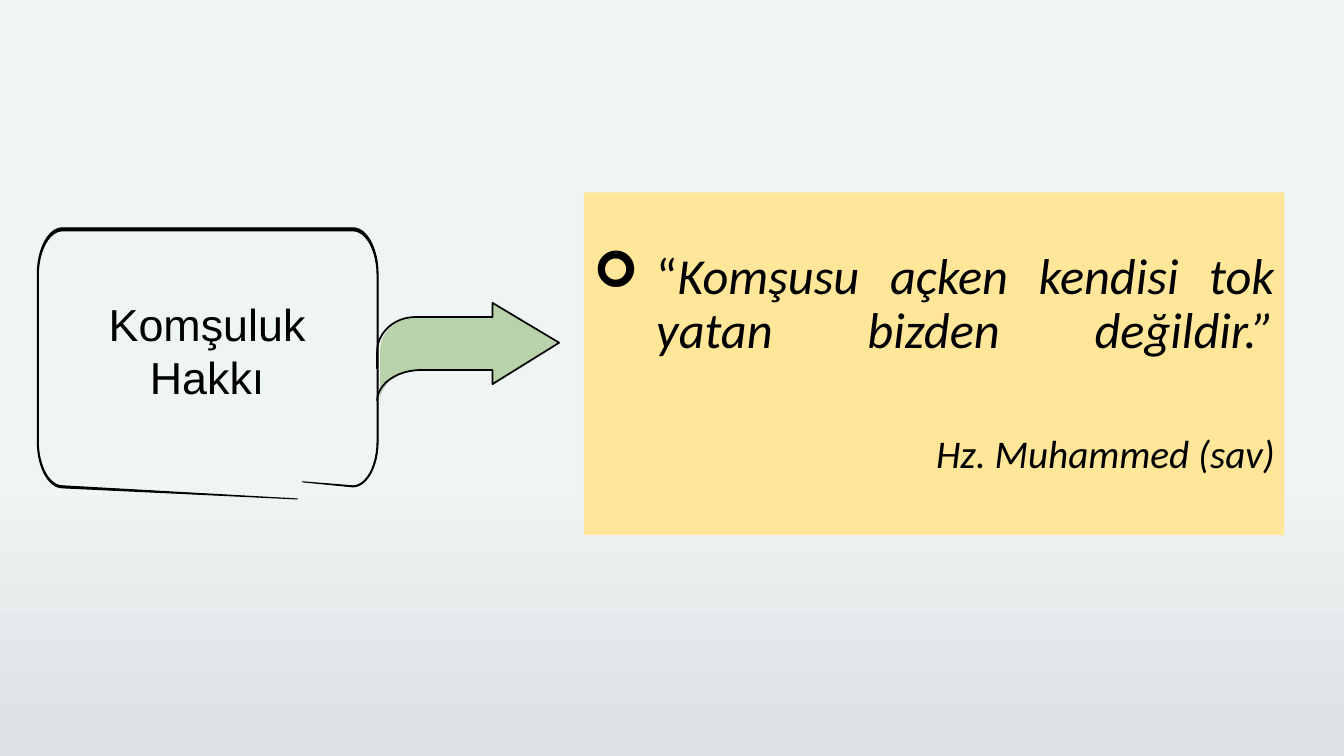
"""Build the neighbour rights slide: framed label, curved arrow and quotation panel."""
from math import cos, radians, sin

from lxml.etree import SubElement
from pptx import Presentation
from pptx.dml.color import RGBColor
from pptx.enum.shapes import MSO_SHAPE as SHAPE
from pptx.enum.text import MSO_ANCHOR as ANCHOR, PP_ALIGN as ALIGN
from pptx.oxml.ns import qn
from pptx.util import Inches, Pt

COLS, ROWS = 1333, 750
CELL = Inches(0.01)
BLACK, GREEN, YELLOW = "000000", "B8D3A9", "FFE699"


def arc(cx, cy, rx, ry, start, end, steps=12):
    angles = [radians(start + (end - start) * i / steps) for i in range(steps + 1)]
    return [(cx + rx * cos(a), cy + ry * sin(a)) for a in angles]


def rgb(value):
    return RGBColor.from_string(value)


prs = Presentation()
prs.slide_width, prs.slide_height = COLS * CELL, ROWS * CELL
s = prs.slides.add_slide(prs.slide_layouts[6])

bg = s.background.fill
bg.gradient()
bg.gradient_angle = 270
for stop, position, color in zip(bg.gradient_stops, (0.62, 1), ("EFF4F5", "DCE1E4")):
    stop.position = position
    stop.color.rgb = rgb(color)

frame = [
    *arc(62, 272, 25, 46, 270, 180),
    *arc(62, 438, 25, 46, 180, 90),
    (295, 495),
    *arc(62, 438, 24, 44, 90, 180),
    *arc(62, 273, 24, 44, 180, 270),
    *arc(350, 273, 24, 44, 270, 360),
    *arc(350, 438, 24, 44, 0, 90),
    (300, 478),
    *arc(350, 438, 25, 45, 90, 0),
    *arc(350, 272, 25, 46, 360, 270),
]
arrow_body = [
    *arc(414, 347, 37, 32, 180, 270),
    (488, 315), (488, 300), (552, 340), (488, 381), (488, 367),
    *arc(417, 398, 40, 31, 270, 180),
]
arrow_edge = [
    (374, 366),
    *arc(412, 349, 38, 34.5, 180, 270),
    (488.5, 314.5), (488.5, 300.5), (554.5, 340), (488.5, 381), (488.5, 367),
    *arc(418, 398, 44, 31, 270, 180),
]
outlines = [
    (frame, True, BLACK, 0.75),
    (arrow_body, True, GREEN, None),
    (arrow_edge, False, None, 1.25),
]
for points, closed, fill, width in outlines:
    (x, y), *rest = [(round(px * CELL), round(py * CELL)) for px, py in points]
    fb = s.shapes.build_freeform(x, y)
    fb.add_line_segments(rest, close=closed)
    sp = fb.convert_to_shape()
    sp.shadow.inherit = False
    if fill:
        sp.fill.solid()
        sp.fill.fore_color.rgb = rgb(fill)
    else:
        sp.fill.background()
    if width:
        sp.line.color.rgb = rgb(BLACK)
        sp.line.width = Pt(width)
    else:
        sp.line.fill.background()

label = s.shapes.add_textbox(46 * CELL, 289 * CELL, 319 * CELL, 118 * CELL)
label.text_frame.word_wrap = True
p = label.text_frame.paragraphs[0]
p.text = "Komşuluk Hakkı"
p.alignment = ALIGN.CENTER
r = p.runs[0]
r.font.name, r.font.size = "Arial", Pt(32)
r.font.color.rgb = rgb(BLACK)

panel = s.shapes.add_shape(SHAPE.RECTANGLE, 579 * CELL, 191 * CELL, 695 * CELL, 340 * CELL)
panel.shadow.inherit = False
panel.fill.solid()
panel.fill.fore_color.rgb = rgb(YELLOW)
panel.line.fill.background()
tf = panel.text_frame
tf.word_wrap = True
tf.vertical_anchor = ANCHOR.MIDDLE

quote = tf.paragraphs[0]
quote.text = "“"
quote.add_run().text = "Komşusu açken kendisi tok yatan bizden değildir.”"
quote.add_line_break()
source = tf.add_paragraph()
source.text = "Hz. Muhammed (sav)"
source.space_before = Pt(10)
for p, align, size in ((quote, ALIGN.JUSTIFY, 36), (source, ALIGN.RIGHT, 28)):
    p.alignment = align
    p.line_spacing = 0.9
    for r in p.runs:
        r.font.name, r.font.size = "Calibri", Pt(size)
        r.font.italic = r.text != "“"
        r.font.color.rgb = rgb(BLACK)

pPr = quote._p.get_or_add_pPr()
pPr.set("marL", str(62 * CELL))
pPr.set("indent", str(-62 * CELL))
SubElement(pPr, qn("a:buFont"), typeface="Wingdings")
SubElement(pPr, qn("a:buChar"), char="➢")
for parent, tag in ((quote._p.find(qn("a:br")), "a:rPr"), (quote._p, "a:endParaRPr")):
    rPr = SubElement(parent, qn(tag), sz="3600", i="1")
    SubElement(rPr, qn("a:latin"), typeface="Calibri")

prs.save("out.pptx")
